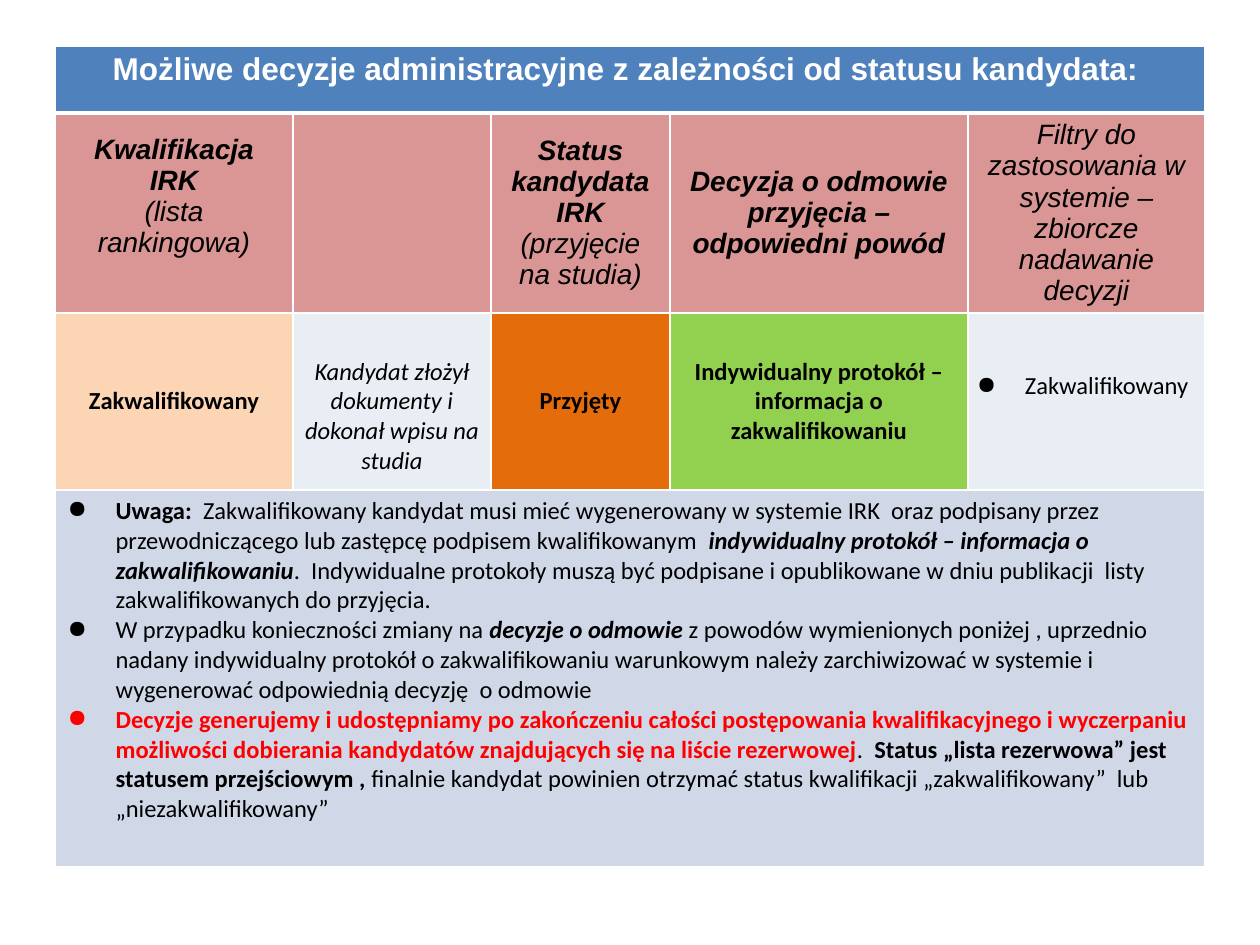
from lxml.etree import SubElement
from pptx import Presentation
from pptx.dml.color import RGBColor
from pptx.enum.text import MSO_ANCHOR, PP_ALIGN
from pptx.oxml.ns import qn
from pptx.util import Emu, Pt

PX = 9144000 // 1260


def color(value):
    return RGBColor.from_string(value)


def write(p, text, font="Calibri", size=14, fg="000000", bold=False, italic=False,
          align=PP_ALIGN.CENTER, bullet=False):
    p.alignment = align
    if bullet:
        pPr = p._p.get_or_add_pPr()
        pPr.set("marL", str(48 * PX))
        pPr.set("indent", str(-48 * PX))
        if pPr.find(qn("a:buChar")) is None:
            SubElement(pPr, qn("a:buChar"), char="●")
    r = p.add_run()
    r.text = text
    r.font.name = font
    r.font.size = Pt(size)
    r.font.bold = bold
    r.font.italic = italic
    r.font.color.rgb = color(fg)


prs = Presentation()
prs.slide_width, prs.slide_height = Emu(1260 * PX), Emu(945 * PX)
s = prs.slides.add_slide(prs.slide_layouts[6])

widths = [238, 198, 179, 298, 237]
heights = [67, 200, 177, 377]
table = s.shapes.add_table(4, 5, Emu(55 * PX), Emu(46 * PX),
                           Emu(sum(widths) * PX), Emu(sum(heights) * PX)).table
table.first_row = table.horz_banding = False
for col, width in zip(table.columns, widths):
    col.width = Emu(width * PX)
for row, height in zip(table.rows, heights):
    row.height = Emu(height * PX)

fills = [
    ["4F81BD"] * 5,
    ["D99694"] * 5,
    ["FCD5B5", "E9EDF4", "E46C0A", "92D050", "E9EDF4"],
    ["D0D8E8"] * 5,
]
for i, row_fills in enumerate(fills):
    for j, fill in enumerate(row_fills):
        cell = table.cell(i, j)
        tcPr = cell._tc.get_or_add_tcPr()
        for side in "LRTB":
            thick = (i, side) in [(0, "B"), (1, "T")]
            ln = SubElement(tcPr, qn(f"a:ln{side}"), w=str(Pt(3 if thick else 1)))
            SubElement(SubElement(ln, qn("a:solidFill")), qn("a:srgbClr"), val="FFFFFF")
        cell.fill.solid()
        cell.fill.fore_color.rgb = color(fill)
        if i in (1, 2):
            cell.vertical_anchor = MSO_ANCHOR.MIDDLE
        if i == 2:
            cell.margin_left = cell.margin_right = Emu(9 * PX)
            cell.margin_top = cell.margin_bottom = 0
for i in (0, 3):
    table.cell(i, 0).merge(table.cell(i, 4))

write(table.cell(0, 0).text_frame.paragraphs[0],
      "Możliwe decyzje administracyjne z zależności od statusu kandydata: ",
      font="Arial", size=18, fg="FFFFFF", bold=True)

headers = [
    (0, "Kwalifikacja IRK", "(lista rankingowa)"),
    (2, "Status kandydata IRK", "(przyjęcie na studia)"),
    (3, "Decyzja o odmowie przyjęcia – odpowiedni powód", ""),
    (4, "", "Filtry do zastosowania w systemie – zbiorcze nadawanie decyzji"),
]
for j, strong, light in headers:
    tf = table.cell(1, j).text_frame
    p = tf.paragraphs[0]
    if strong:
        write(p, strong, font="Arial", size=16, bold=True, italic=True)
    if light:
        p = tf.add_paragraph() if strong else p
        write(p, light, font="Arial", size=16, italic=True)
table.cell(1, 0).margin_bottom = Emu(40 * PX)

statuses = [
    ("Zakwalifikowany", dict(bold=True)),
    ("Kandydat złożył dokumenty i dokonał wpisu na studia", dict(italic=True)),
    ("Przyjęty", dict(bold=True)),
    ("Indywidualny protokół – informacja o zakwalifikowaniu", dict(bold=True)),
    ("Zakwalifikowany", dict(align=PP_ALIGN.LEFT, bullet=True)),
]
for j, (text, style) in enumerate(statuses):
    write(table.cell(2, j).text_frame.paragraphs[0], text, **style)
table.cell(2, 1).margin_top = Emu(30 * PX)
table.cell(2, 4).margin_bottom = Emu(30 * PX)

strong = dict(bold=True)
accent = dict(bold=True, italic=True)
notes = [
    [("Uwaga:", strong),
     ("  Zakwalifikowany kandydat musi mieć wygenerowany w systemie IRK  oraz podpisany "
      "przez przewodniczącego lub zastępcę podpisem kwalifikowanym  ", {}),
     ("indywidualny protokół – informacja o zakwalifikowaniu", accent),
     (".  Indywidualne protokoły muszą być podpisane i opublikowane w dniu publikacji  "
      "listy zakwalifikowanych do przyjęcia.", {})],
    [("W przypadku konieczności zmiany na ", {}),
     ("decyzje o odmowie", accent),
     (" z powodów wymienionych poniżej , uprzednio nadany indywidualny protokół o "
      "zakwalifikowaniu warunkowym należy zarchiwizować w systemie i wygenerować "
      "odpowiednią decyzję  o odmowie", {})],
    [("Decyzje generujemy i udostępniamy po zakończeniu całości postępowania "
      "kwalifikacyjnego i wyczerpaniu możliwości dobierania kandydatów znajdujących się "
      "na liście rezerwowej", dict(bold=True, fg="FF0000")),
     (".  ", {}),
     ("Status „lista rezerwowa” jest statusem przejściowym ,", strong),
     (" finalnie kandydat powinien otrzymać status kwalifikacji „zakwalifikowany”  lub "
      "„niezakwalifikowany”", {})],
]
tf = table.cell(3, 0).text_frame
for k, note in enumerate(notes):
    p = tf.add_paragraph() if k else tf.paragraphs[0]
    for text, style in note:
        write(p, text, align=PP_ALIGN.LEFT, bullet=True, **style)

prs.save("out.pptx")
